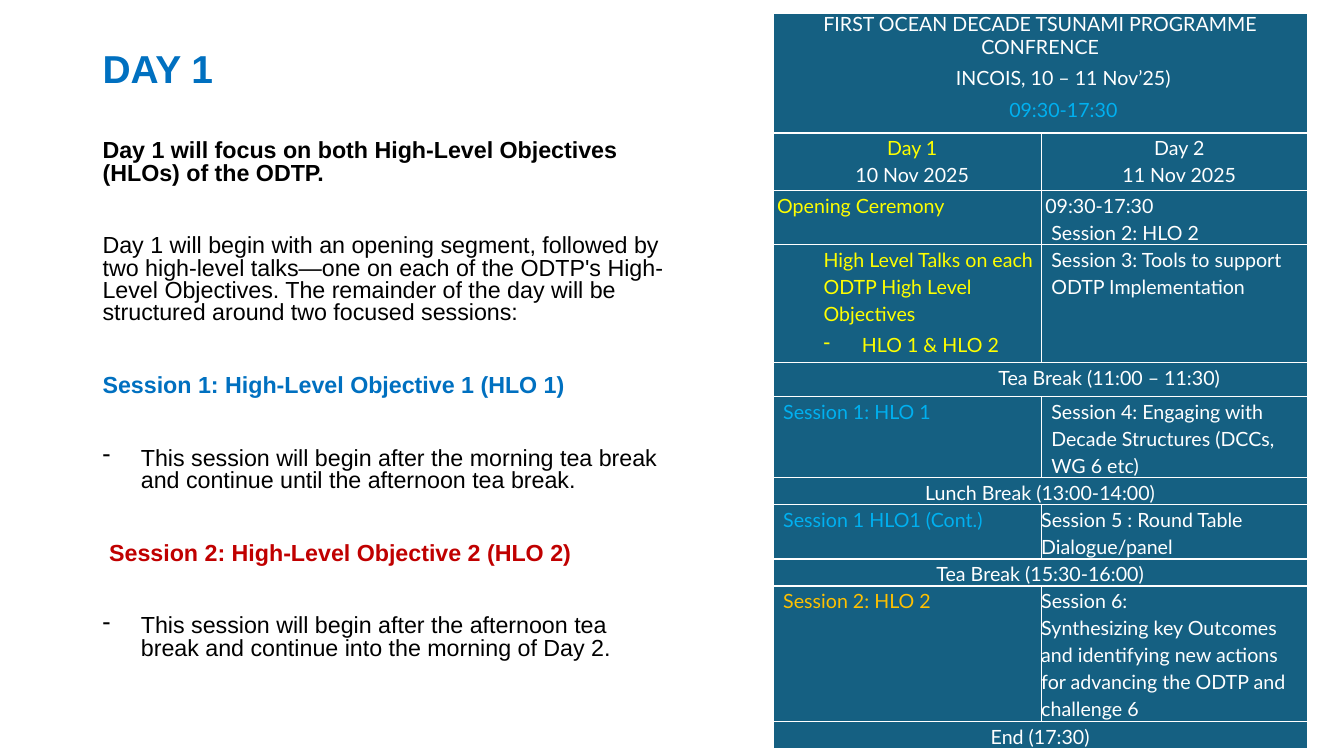
from dataclasses import dataclass
from typing import Any

from lxml import etree
from pptx import Presentation
from pptx.dml.color import RGBColor
from pptx.enum.text import MSO_ANCHOR, PP_ALIGN
from pptx.oxml.ns import qn
from pptx.util import Emu, Inches, Pt

LEFT, CENTER = PP_ALIGN.LEFT, PP_ALIGN.CENTER
TOP = MSO_ANCHOR.TOP


@dataclass(frozen=True)
class Theme:
    blue: str = "0070C0"
    red: str = "C00000"
    black: str = "000000"
    white: str = "FFFFFF"
    yellow: str = "FFFF00"
    sky: str = "00B0F0"
    amber: str = "FFC000"
    panel: str = "156082"
    body_font: str = "Arial"
    table_font: str = "Lato"
    title_size: float = 27.8
    body_size: float = 16.6
    table_size: float = 14
    border_width: float = 1


@dataclass(frozen=True)
class Line:
    """One paragraph; margin and hang are in grid columns, before is in points."""
    text: str
    color: str
    font: str
    size: float
    bold: bool = False
    align: Any = LEFT
    margin: float = 0
    hang: float = 0
    spacing: float = 1.15
    before: float = 0


@dataclass(frozen=True)
class AgendaRow:
    """A table row, height in grid rows; a single cell spans both columns."""
    height: float
    cells: tuple[list[Line], ...]


THEME = Theme()

# Grid: 160 columns by 90 rows on the slide
SLIDE_WIDTH, SLIDE_HEIGHT = Inches(13.33), Inches(7.5)
COLUMNS, ROWS = 160, 90


def across(columns: float) -> Emu:
    return Emu(round(SLIDE_WIDTH * columns / COLUMNS))


def down(rows: float) -> Emu:
    return Emu(round(SLIDE_HEIGHT * rows / ROWS))


def body(text: str, color: str = THEME.black, **extra: Any) -> Line:
    values = dict(size=THEME.body_size, spacing=0.8, before=36) | extra
    return Line(text, color, THEME.body_font, **values)


def entry(text: str, color: str = THEME.white, **extra: Any) -> Line:
    return Line(text, color, THEME.table_font, THEME.table_size, **extra)


def centered(text: str, color: str = THEME.white, **extra: Any) -> Line:
    return entry(text, color, align=CENTER, **extra)


# Wording of the left side
HANG, INSET = 4.56, 1.2
SUMMARY = [
    body("DAY 1", THEME.blue, size=THEME.title_size, bold=True, before=10),
    body("Day 1 will focus on both High-Level Objectives (HLOs) of the ODTP.", bold=True),
    body("Day 1 will begin with an opening segment, followed by two high-level talks—one "
         "on each of the ODTP's High-Level Objectives. The remainder of the day will be "
         "structured around two focused sessions:"),
    body("Session 1: High-Level Objective 1 (HLO 1)", THEME.blue, bold=True),
    body("This session will begin after the morning tea break and continue until the "
         "afternoon tea break.", margin=HANG, hang=HANG),
    body("Session 2: High-Level Objective 2 (HLO 2)", THEME.red, bold=True, margin=0.78),
    body("This session will begin after the afternoon tea break and continue into the "
         "morning of Day 2.", margin=HANG, hang=HANG),
]

# Wording of the agenda
HEADER = dict(spacing=0.97, before=6.2)
AGENDA = [
    AgendaRow(14.28, ([
        centered("FIRST OCEAN DECADE TSUNAMI PROGRAMME CONFRENCE", **HEADER),
        centered("INCOIS, 10 – 11 Nov’25)", margin=5.52, **HEADER),
        centered("09:30-17:30", THEME.sky, margin=5.52, **HEADER)],)),
    AgendaRow(6.84, (
        [centered("Day 1", THEME.yellow, margin=INSET, before=4),
         centered("10 Nov 2025", margin=INSET)],
        [centered("Day 2", margin=INSET, before=4),
         centered("11 Nov 2025", margin=INSET)])),
    AgendaRow(5.76, (
        [entry("Opening Ceremony", THEME.yellow, margin=0.48, before=3)],
        [entry("09:30-17:30", margin=0.48),
         entry("Session 2: HLO 2", margin=INSET)])),
    AgendaRow(14.04, (
        [entry("High Level Talks on each ODTP High Level Objectives", THEME.yellow,
               margin=6, before=3),
         entry("HLO 1 & HLO 2", THEME.yellow, margin=10.56, hang=HANG, before=3)],
        [entry("Session 3: Tools to support ODTP Implementation", margin=INSET)])),
    AgendaRow(4.08, ([centered("Tea Break (11:00 – 11:30)", margin=16.44, before=9.6)],)),
    AgendaRow(8.76, (
        [entry("Session 1: HLO 1", THEME.sky, margin=INSET, before=6.9)],
        [entry("Session 4: Engaging with Decade Structures (DCCs, WG 6 etc)",
               margin=INSET)])),
    AgendaRow(2.76, ([centered("Lunch Break (13:00-14:00)")],)),
    AgendaRow(5.76, (
        [entry("Session 1 HLO1 (Cont.)", THEME.sky, margin=INSET, before=6.9)],
        [entry("Session 5 : Round Table Dialogue/panel")])),
    AgendaRow(2.76, ([centered("Tea Break (15:30-16:00)")],)),
    AgendaRow(14.64, (
        [entry("Session 2: HLO 2", THEME.amber, margin=INSET, before=6.9)],
        [entry("Session 6:"),
         entry("Synthesizing key Outcomes and identifying new actions for advancing the "
               "ODTP and challenge 6")])),
    AgendaRow(2.76, ([centered("End (17:30)")],)),
]


def set_values(target: Any, values: dict[str, Any]) -> None:
    for name, value in values.items():
        setattr(target, name, value)


def write_lines(frame: Any, lines: list[Line]) -> None:
    for index, line in enumerate(lines):
        paragraph = frame.add_paragraph() if index else frame.paragraphs[0]
        set_values(paragraph, dict(alignment=line.align, line_spacing=line.spacing,
                                   space_before=Pt(line.before), space_after=Pt(0)))
        # Indents and dash bullets
        properties = paragraph._p.get_or_add_pPr()
        properties.set("marL", str(across(line.margin)))
        properties.set("indent", str(-across(line.hang)))
        if line.hang:
            etree.SubElement(properties, qn("a:buChar"), char="-")
        run = paragraph.add_run()
        run.text = line.text
        set_values(run.font, dict(name=line.font, size=Pt(line.size), bold=line.bold))
        run.font.color.rgb = RGBColor.from_string(line.color)


def draw_borders(cell: Any) -> None:
    properties = cell._tc.get_or_add_tcPr()
    for index, side in enumerate(("lnL", "lnR", "lnT", "lnB")):
        border = etree.Element(qn(f"a:{side}"), w=str(Pt(THEME.border_width)))
        fill = etree.SubElement(border, qn("a:solidFill"))
        etree.SubElement(fill, qn("a:srgbClr"), val=THEME.white)
        properties.insert(index, border)


def draw_summary(slide: Any) -> None:
    box = slide.shapes.add_textbox(across(11.04), down(5.76), across(69.24), down(75.24))
    set_values(box.text_frame, dict(word_wrap=True, vertical_anchor=TOP))
    write_lines(box.text_frame, SUMMARY)


def draw_agenda(slide: Any) -> None:
    widths = (31.92, 31.68)
    height = sum(row.height for row in AGENDA)
    table = slide.shapes.add_table(len(AGENDA), len(widths), across(92.04), down(1.56),
                                   across(sum(widths)), down(height)).table
    set_values(table, dict(first_row=False, horz_banding=False))
    for column, width in zip(table.columns, widths):
        column.width = across(width)
    for index, row in enumerate(AGENDA):
        table.rows[index].height = down(row.height)
        for cell in table.rows[index].cells:
            set_values(cell, dict(margin_left=0, margin_right=0, margin_top=0,
                                  margin_bottom=0, vertical_anchor=TOP))
            cell.fill.solid()
            cell.fill.fore_color.rgb = RGBColor.from_string(THEME.panel)
            draw_borders(cell)
        if len(row.cells) == 1:
            table.cell(index, 0).merge(table.cell(index, 1))
        for position, lines in enumerate(row.cells):
            write_lines(table.cell(index, position).text_frame, lines)


def main() -> None:
    presentation = Presentation()
    set_values(presentation, dict(slide_width=SLIDE_WIDTH, slide_height=SLIDE_HEIGHT))
    slide = presentation.slides.add_slide(presentation.slide_layouts[6])
    draw_summary(slide)
    draw_agenda(slide)
    presentation.save("out.pptx")


if __name__ == "__main__":
    main()
